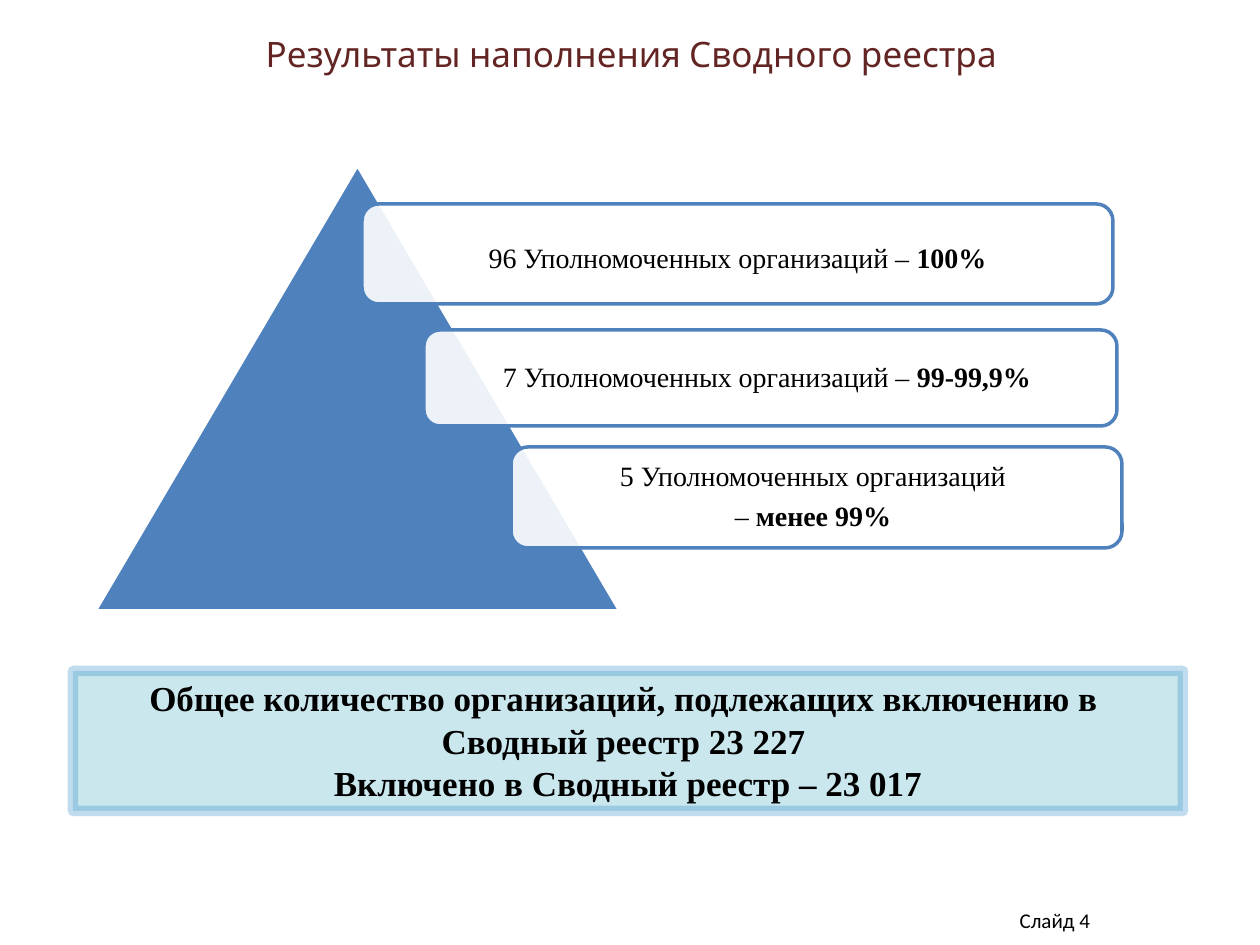
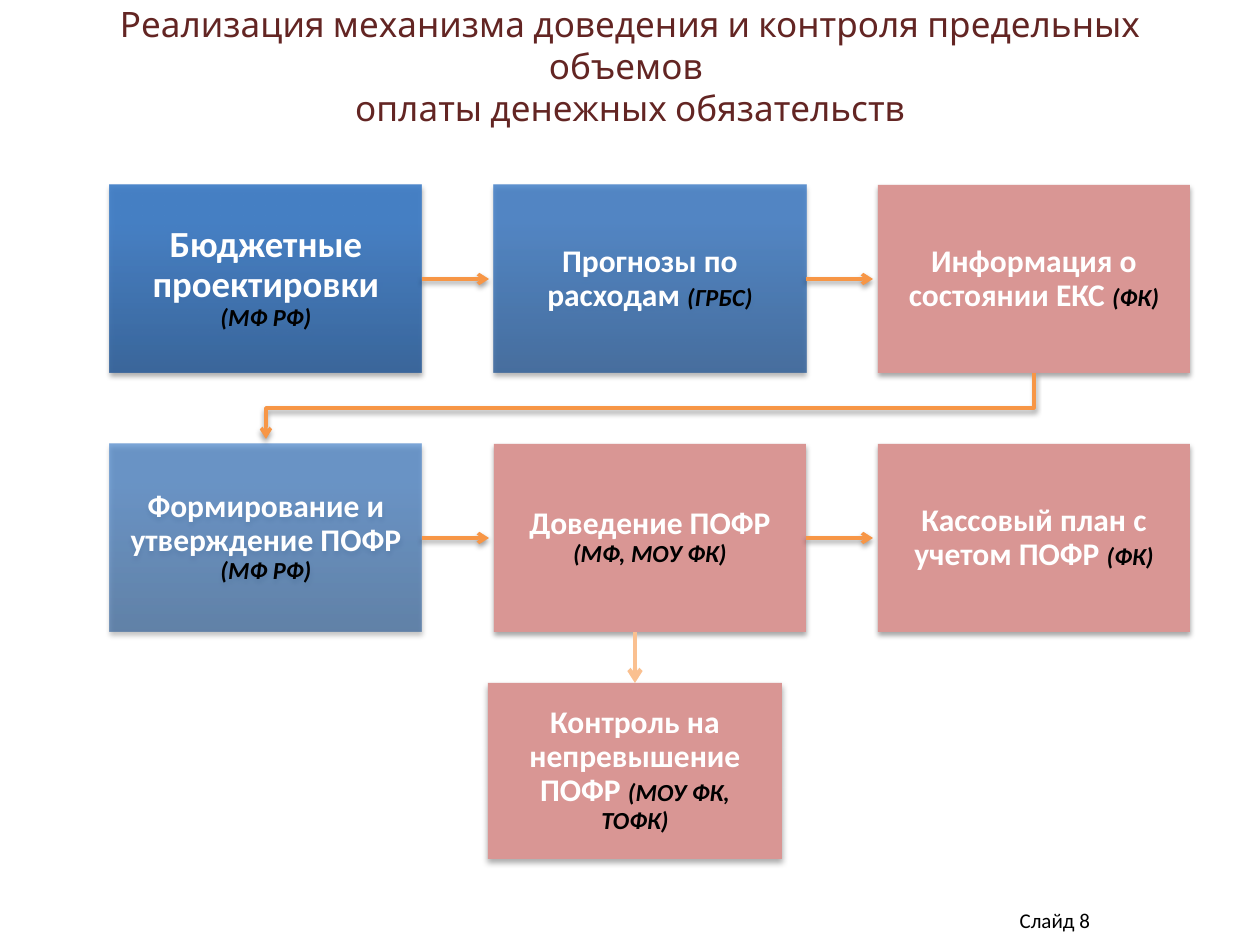
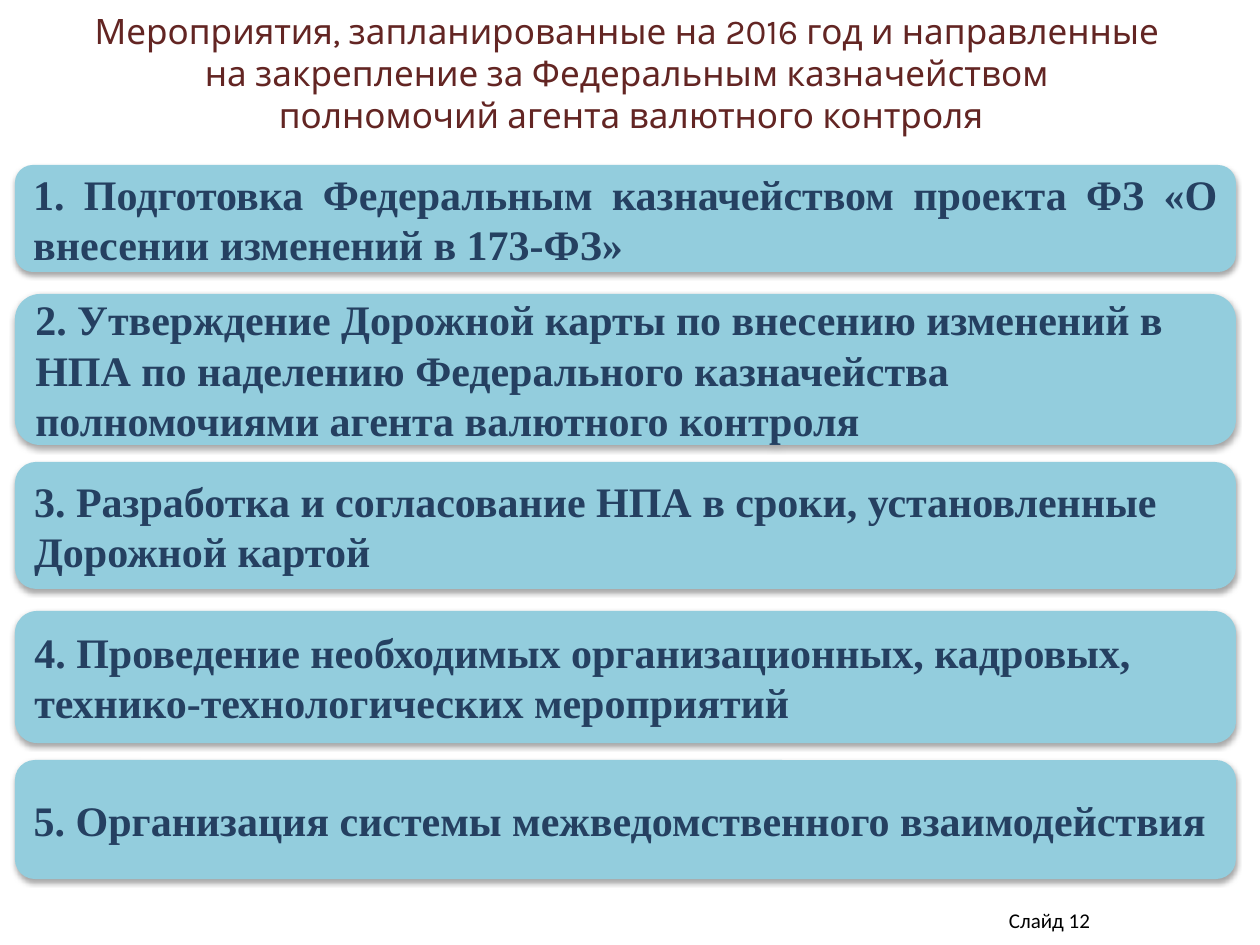
from lxml import etree
from pptx import Presentation
from pptx import util as u
from pptx.dml.color import RGBColor
from pptx.enum import shapes, text
from pptx.oxml.ns import qn

SCALE = 914400 / 126
SLIDE_WIDTH, SLIDE_HEIGHT = 1260, 945

BLACK = RGBColor(0x00, 0x00, 0x00)
WHITE = RGBColor(0xFF, 0xFF, 0xFF)
MAROON = RGBColor(0x63, 0x25, 0x23)
BLUE = RGBColor(0x4F, 0x81, 0xBD)
DEEP_BLUE = RGBColor(0x2F, 0x5F, 0x99)
BRIGHT_BLUE = RGBColor(0x3D, 0x7C, 0xC7)
STRONG_BLUE = RGBColor(0x00, 0x70, 0xC0)
NAVY = RGBColor(0x25, 0x40, 0x61)
AQUA = RGBColor(0x93, 0xCD, 0xDD)
ROSE = RGBColor(0xD9, 0x96, 0x94)
ORANGE = RGBColor(0xF7, 0x96, 0x46)
PEACH = RGBColor(0xFA, 0xC0, 0x90)

SERIF, SANS, TITLE_FONT = "Times New Roman", "Calibri", "Karla"
CENTER, LEFT = text.PP_ALIGN.CENTER, text.PP_ALIGN.LEFT
RIGHT, JUSTIFY = text.PP_ALIGN.RIGHT, text.PP_ALIGN.JUSTIFY
TOP, MIDDLE = text.MSO_ANCHOR.TOP, text.MSO_ANCHOR.MIDDLE
RECTANGLE = shapes.MSO_SHAPE.RECTANGLE
ROUNDED = shapes.MSO_SHAPE.ROUNDED_RECTANGLE
TRIANGLE = shapes.MSO_SHAPE.ISOSCELES_TRIANGLE
BOX_SHADOW = (35, 3.1, 1.8)
ARROW_SHADOW = (38, 3.1, 1.6)
CONTROL_SHADOW = (32, 3.5, 2.2)


def px(value):
    """Turn px into EMU."""
    return u.Emu(round(value * SCALE))


def set_alpha(element, percent):
    """Give every colour inside an element an opacity."""
    for color in element.iter(qn("a:srgbClr")):
        etree.SubElement(color, qn("a:alpha"), val=str(percent * 1000))


def set_shadow(shape, shadow=None):
    """Set a downward shadow (opacity, blur, distance), or none."""
    effects = etree.SubElement(shape._element.spPr, qn("a:effectLst"))
    if shadow:
        opacity, blur, distance = shadow
        outer = etree.SubElement(effects, qn("a:outerShdw"), blurRad=str(u.Pt(blur)),
                                 dist=str(u.Pt(distance)), dir="5400000", rotWithShape="0")
        etree.SubElement(outer, qn("a:srgbClr"), val=str(BLACK))
        set_alpha(outer, opacity)


def style_line(shape, color, width, arrow=False):
    """Set the colour, width and arrowhead of a line."""
    shape.line.color.rgb = color
    shape.line.width = u.Pt(width)
    if arrow:
        etree.SubElement(shape._element.spPr.find(qn("a:ln")), qn("a:tailEnd"), type="arrow")


def run(words, size, font, color, bold=False, italic=False):
    """Describe one run of text."""
    return words, size, font, color, bold, italic


def write(shape, paragraphs, align=CENTER, anchor=MIDDLE, insets=(13, 6, 13, 6),
          line_spacing=None, space_after=0):
    """Fill a shape with paragraphs, each a list of runs."""
    frame = shape.text_frame
    frame.word_wrap = True
    frame.vertical_anchor = anchor
    frame.margin_left, frame.margin_top, frame.margin_right, frame.margin_bottom = map(px, insets)
    for index, runs in enumerate(paragraphs):
        paragraph = frame.add_paragraph() if index else frame.paragraphs[0]
        paragraph.alignment = align
        paragraph.space_after = u.Pt(space_after)
        if line_spacing:
            paragraph.line_spacing = line_spacing
        for words, size, font, color, bold, italic in runs:
            for number, line in enumerate(words.split("\n")):
                if number:
                    paragraph.add_line_break()
                piece = paragraph.add_run()
                piece.text = line
                piece.font.size, piece.font.name = u.Pt(size), font
                piece.font.bold, piece.font.italic = bold, italic
                piece.font.color.rgb = color


def add_box(slide, kind, bounds, color, opacity=None, outline=None, shadow=None):
    """Add a filled preset shape; a pair of colours makes a gradient going up."""
    shape = slide.shapes.add_shape(kind, *map(px, bounds))
    if isinstance(color, RGBColor):
        shape.fill.solid()
        shape.fill.fore_color.rgb = color
    else:
        shape.fill.gradient()
        shape.fill.gradient_angle = 90
        for stop, stop_color, position in zip(shape.fill.gradient_stops, color, (0, 0.8)):
            stop.color.rgb, stop.position = stop_color, position
    if opacity:
        set_alpha(shape._element.spPr, opacity)
    if outline:
        style_line(shape, *outline)
    else:
        shape.line.fill.background()
    set_shadow(shape, shadow)
    return shape


def add_arrow(slide, start, end, color, width, shadow=None):
    """Add a straight arrow."""
    arrow = slide.shapes.add_connector(shapes.MSO_CONNECTOR.STRAIGHT, *map(px, start + end))
    style_line(arrow, color, width, arrow=True)
    set_shadow(arrow, shadow)
    return arrow


def add_bent_arrow(slide, points):
    """Add an open arrow through several points."""
    builder = slide.shapes.build_freeform(*points[0], scale=SCALE)
    builder.add_line_segments(points[1:], close=False)
    arrow = builder.convert_to_shape()
    arrow.fill.background()
    style_line(arrow, ORANGE, 2, arrow=True)
    set_shadow(arrow, ARROW_SHADOW)


def add_slide(presentation, title, title_bounds, number, title_anchor=MIDDLE):
    """Add a blank slide with its title and slide number."""
    slide = presentation.slides.add_slide(presentation.slide_layouts[6])
    heading = slide.shapes.add_textbox(*map(px, title_bounds))
    write(heading, [[run(title, 20, TITLE_FONT, MAROON)]], anchor=title_anchor)
    footer = slide.shapes.add_textbox(*map(px, (809, 895, 294, 50)))
    write(footer, [[run(f"Слайд {number}", 12, SANS, BLACK)]], align=RIGHT)
    return slide


def add_level(slide, bounds, lines, top_inset=9):
    """Add a level of the pyramid; each line is a plain and a bold part."""
    level = add_box(slide, ROUNDED, bounds, WHITE, opacity=90, outline=(BLUE, 2))
    paragraphs = [[run(plain, 16, SERIF, BLACK), run(strong, 16, SERIF, BLACK, bold=True)]
                  if strong else [run(plain, 16, SERIF, BLACK)] for plain, strong in lines]
    write(level, paragraphs, insets=(9, top_inset, 9, 9), line_spacing=0.9, space_after=6)


def add_step(slide, bounds, name, owner, opacity=None, size=18, inset=18, shadow=BOX_SHADOW):
    """Add a process step: blue gradient when an opacity is given, else rose."""
    color = (DEEP_BLUE, BRIGHT_BLUE) if opacity else ROSE
    step = add_box(slide, RECTANGLE, bounds, color, opacity=opacity, shadow=shadow)
    write(step, [[run(name, size, SANS, WHITE, bold=True),
                  run(owner, 14, SANS, BLACK, bold=True, italic=True)]],
          insets=(inset,) * 4, line_spacing=0.9)
    return step


def build_registry_slide(presentation):
    """Build the slide on filling the register."""
    slide = add_slide(presentation, "Результаты наполнения Сводного реестра ",
                      (144, 26, 983, 55), 4, TOP)
    add_box(slide, TRIANGLE, (95, 165, 525, 446), BLUE, outline=(WHITE, 2))
    add_level(slide, (362, 204, 751, 100), [("96 Уполномоченных организаций – ", "100%")], 21)
    add_level(slide, (424, 330, 693, 96), [("7 Уполномоченных организаций – ", "99-99,9% ")])
    add_level(slide, (511, 447, 611, 101),
              [("5 Уполномоченных организаций ", ""), ("– ", "менее 99% ")])
    total = add_box(slide, RECTANGLE, (73, 671, 1110, 140), AQUA, opacity=48,
                    outline=(STRONG_BLUE, 6))
    set_alpha(total._element.spPr.find(qn("a:ln")), 23)
    lines = ("Общее количество организаций, подлежащих включению в ",
             "Сводный реестр 23 227 ", "Включено в Сводный реестр – 23 017")
    write(total, [[run(line, 20, SERIF, BLACK, bold=True)] for line in lines], anchor=TOP)


def build_process_slide(presentation):
    """Build the slide with the process of setting spending limits."""
    slide = add_slide(presentation, "Реализация механизма доведения и контроля предельных "
                      "объемов \nоплаты денежных обязательств", (63, -14, 1134, 158), 8)
    left, top, width, height = 110, 185, 312, 188
    column_step, row_step, arrow_gap = 384, 259, 5
    rows = [
        [("Бюджетные проектировки ", "(МФ РФ)", 90, 21, 20),
         ("Прогнозы по расходам ", "(ГРБС)", 82),
         ("Информация о состоянии ЕКС ", "(ФК)")],
        [("Формирование и утверждение ПОФР ", "(МФ РФ)", 66),
         ("Доведение ПОФР ", "(МФ, МОУ ФК)"),
         ("Кассовый план с учетом ПОФР ", "(ФК)")],
    ]
    for row, steps in enumerate(rows):
        y = top + row * row_step
        for column, details in enumerate(steps):
            x = left + column * column_step
            step = add_step(slide, (x, y, width, height), *details)
            if column < len(steps) - 1:
                middle = y + height // 2
                arrow = add_arrow(slide, (x + width, middle),
                                  (x + column_step - arrow_gap, middle),
                                  ORANGE, 2, ARROW_SHADOW)
                arrow.begin_connect(step, 3)
    first_x = left + width // 2
    last_x = first_x + 2 * column_step
    bottom, second_top = top + height, top + row_step
    turn = (bottom + second_top) // 2
    add_bent_arrow(slide, [(last_x, bottom), (last_x, turn), (first_x, turn),
                           (first_x, second_top - arrow_gap)])
    control = add_step(slide, (488, 683, 294, 176), "Контроль на непревышение ПОФР ",
                       "(МОУ ФК, ТОФК)", shadow=CONTROL_SHADOW)
    arrow = add_arrow(slide, (635, second_top + height), (635, 683), PEACH, 2.5)
    arrow.end_connect(control, 0)


def build_measures_slide(presentation):
    """Build the slide with the planned measures."""
    slide = add_slide(presentation, "Мероприятия, запланированные на 2016 год и направленные \n"
                      "на закрепление за Федеральным казначейством \n"
                      "полномочий агента валютного контроля", (64, 0, 1134, 144), 12)
    measures = [
        (165, 107, JUSTIFY, "1. Подготовка Федеральным казначейством проекта ФЗ "
                            "«О внесении изменений в 173-ФЗ»"),
        (294, 151, LEFT, "2. Утверждение Дорожной карты по внесению изменений в НПА по наделению "
                         "Федерального казначейства полномочиями агента валютного контроля"),
        (462, 127, LEFT, "3. Разработка и согласование НПА в сроки, установленные "
                         "Дорожной картой"),
        (611, 132, LEFT, "4. Проведение необходимых организационных, кадровых, "
                         "технико-технологических мероприятий"),
        (760, 119, LEFT, "5. Организация системы межведомственного взаимодействия"),
    ]
    for top, height, align, words in measures:
        bar = add_box(slide, ROUNDED, (15, top, 1221, height), AQUA, shadow=BOX_SHADOW)
        write(bar, [[run(words, 24, SERIF, NAVY, bold=True)]], align=align)


def main():
    """Build and save the presentation."""
    presentation = Presentation()
    presentation.slide_width, presentation.slide_height = px(SLIDE_WIDTH), px(SLIDE_HEIGHT)
    build_registry_slide(presentation)
    build_process_slide(presentation)
    build_measures_slide(presentation)
    presentation.save("out.pptx")


if __name__ == "__main__":
    main()
